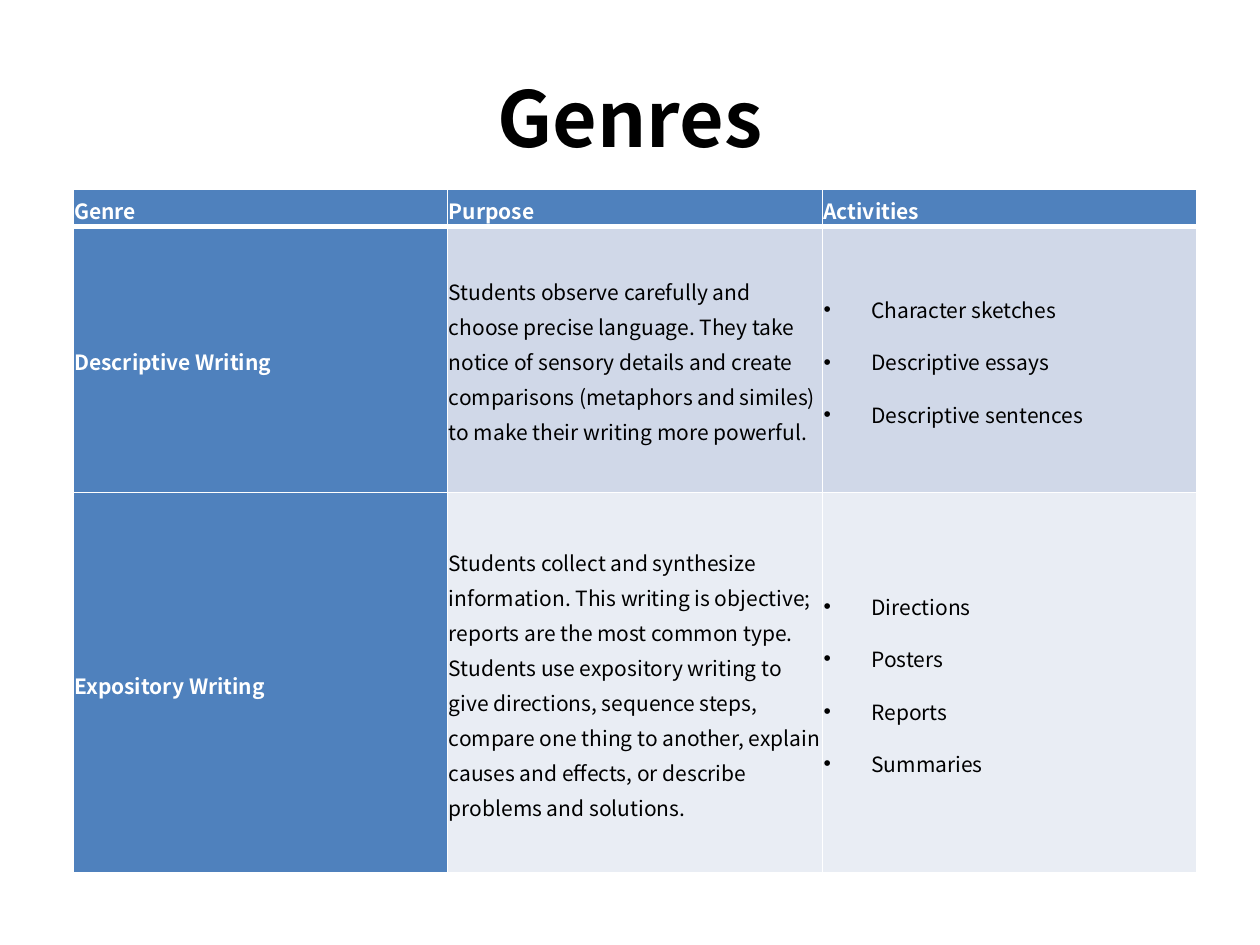
from lxml.etree import SubElement
from pptx import Presentation
from pptx.dml.color import RGBColor
from pptx.enum.text import MSO_ANCHOR, PP_ALIGN
from pptx.oxml import parse_xml
from pptx.oxml.ns import nsdecls, qn
from pptx.util import Inches, Pt

FONT = "Noto Sans CJK KR"
BLUE, WHITE, BLACK = "4F81BD", "FFFFFF", "000000"
BANDS = ["D0D8E8", "E9EDF4"]
ROW_HEIGHTS = [0.28, 2.11, 3.02]
BULLET_INDENT = 0.38

HEADERS = ["Genre", "Purpose", "Activities"]
GENRES = [
    (
        "Descriptive Writing",
        "Students observe carefully and choose precise language. They take notice of "
        "sensory details and create comparisons (metaphors and similes) to make their "
        "writing more powerful.",
        ["Character sketches", "Descriptive essays", "Descriptive sentences"],
    ),
    (
        "Expository Writing",
        "Students collect and synthesize information. This writing is objective; reports "
        "are the most common type. Students use expository writing to give directions, "
        "sequence steps, compare one thing to another, explain causes and effects, or "
        "describe problems and solutions.",
        ["Directions", "Posters", "Reports", "Summaries"],
    ),
]


def color(value):
    return RGBColor.from_string(value)


def format_font(para, size, value, bold):
    for span in para.runs:
        span.font.name = FONT
        span.font.size = Pt(size)
        span.font.bold = bold
        span.font.color.rgb = color(value)


def add_bullet(para):
    para.space_after = Pt(10)
    properties = para._p.get_or_add_pPr()
    properties.set("marL", str(Inches(BULLET_INDENT)))
    properties.set("indent", str(-Inches(BULLET_INDENT)))
    SubElement(properties, qn("a:buFont"), typeface="Arial")
    SubElement(properties, qn("a:buChar"), char="•")


def set_borders(cell, top, bottom):
    properties = cell._tc.get_or_add_tcPr()
    widths = {"lnL": 1, "lnR": 1, "lnT": top, "lnB": bottom}
    for position, (side, width) in enumerate(widths.items()):
        line = parse_xml(
            f'<a:{side} {nsdecls("a")} w="{Pt(width)}"><a:solidFill>'
            f'<a:srgbClr val="{WHITE}"/></a:solidFill></a:{side}>'
        )
        properties.insert(position, line)


def fill_cell(cell, lines, fill, text_color, bold, bulleted):
    cell.margin_left = cell.margin_right = Inches(0.01)
    cell.margin_top = cell.margin_bottom = Inches(0.01)
    cell.vertical_anchor = MSO_ANCHOR.MIDDLE
    cell.fill.solid()
    cell.fill.fore_color.rgb = color(fill)
    cell.text_frame.text = "\n".join(lines)
    for para in cell.text_frame.paragraphs:
        para.line_spacing = 1.15
        format_font(para, 12, text_color, bold)
        if bulleted:
            add_bullet(para)


def place_title(page, left, top, width, height):
    title = page.shapes.title
    title.left, title.top = Inches(left), Inches(top)
    title.width, title.height = Inches(width), Inches(height)
    title.text_frame.text = "Genres"
    title.text_frame.vertical_anchor = MSO_ANCHOR.MIDDLE
    para = title.text_frame.paragraphs[0]
    para.alignment = PP_ALIGN.CENTER
    format_font(para, 44, BLACK, True)


def add_genre_table(page, left, top, width):
    rows = [HEADERS, *GENRES]
    table = page.shapes.add_table(
        len(rows), len(HEADERS), Inches(left), Inches(top),
        Inches(width), Inches(sum(ROW_HEIGHTS)),
    ).table
    for column in table.columns:
        column.width = Inches(width / len(HEADERS))
    for row_index, values in enumerate(rows):
        table.rows[row_index].height = Inches(ROW_HEIGHTS[row_index])
        for column_index, value in enumerate(values):
            cell = table.cell(row_index, column_index)
            heading = row_index == 0 or column_index == 0
            bulleted = isinstance(value, list)
            fill_cell(
                cell,
                value if bulleted else [value],
                BLUE if heading else BANDS[row_index - 1],
                WHITE if heading else BLACK,
                heading,
                bulleted,
            )
            set_borders(
                cell,
                top=3 if row_index == 1 else 1,
                bottom=3 if row_index == 0 else 1,
            )


def main():
    deck = Presentation()
    deck.slide_width, deck.slide_height = Inches(10), Inches(7.5)
    page = deck.slides.add_slide(deck.slide_layouts[5])
    place_title(page, 0.5, 0.3, 9, 1.25)
    add_genre_table(page, 0.58, 1.5, 8.92)
    deck.save("out.pptx")


if __name__ == "__main__":
    main()
